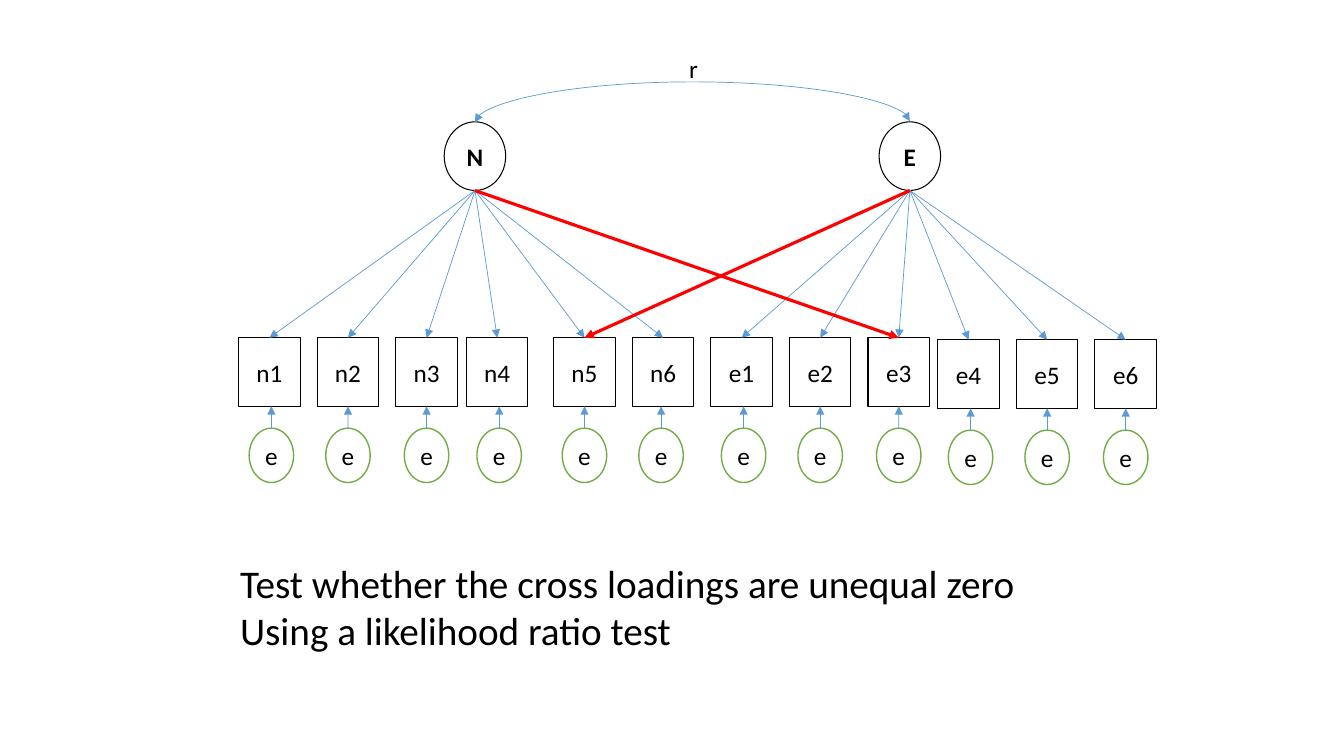
from lxml import etree
from pptx import Presentation
from pptx.dml.color import RGBColor
from pptx.enum import shapes, text
from pptx.oxml import ns
from pptx.util import Cm, Pt

BLACK = RGBColor(0x00, 0x00, 0x00)
WHITE = RGBColor(0xFF, 0xFF, 0xFF)
BLUE = RGBColor(0x5B, 0x9B, 0xD5)
GREEN = RGBColor(0x70, 0xAD, 0x47)
RED = RGBColor(0xFF, 0x00, 0x00)

PITCH = 1.98
ITEM_WIDTH, ITEM_HEIGHT = 1.55, 1.73
ERROR_WIDTH, ERROR_HEIGHT = 1.12, 1.37
ERROR_DROP = 2.28
FACTOR_TOP = 3.07
FACTOR_CENTERS = {"N": 11.97, "E": 22.93}
ITEM_RUNS = [
    (6.79, 8.51, ["n1", "n2", "n3"]),
    (12.53, 8.51, ["n4"]),
    (14.73, 8.51, ["n5", "n6", "e1", "e2", "e3"]),
    (24.41, 8.56, ["e4", "e5", "e6"]),
]
ERROR_SHIFTS = {"n1": 0.05, "n4": 0.05, "n6": -0.05, "e1": 0.05, "e4": 0.05}
CROSS_LOADINGS = [("E", "n5"), ("N", "e3")]
CONCLUSION = ["Test whether the cross loadings are unequal zero",
              "Using a likelihood ratio test"]


def write_text(shape, lines, size=18, bold=False, align=text.PP_ALIGN.CENTER,
               anchor=text.MSO_ANCHOR.MIDDLE):
    """Write one paragraph per line into a shape."""
    frame = shape.text_frame
    frame.word_wrap = False
    frame.vertical_anchor = anchor
    frame.margin_left = frame.margin_right = 0
    frame.margin_top = frame.margin_bottom = 0
    for index, line in enumerate(lines):
        paragraph = frame.add_paragraph() if index else frame.paragraphs[0]
        paragraph.alignment = align
        run = paragraph.add_run()
        run.text = line
        run.font.name = "Calibri"
        run.font.size = Pt(size)
        run.font.bold = bold
        run.font.color.rgb = BLACK


def add_node(slide, kind, center, top, width, height, label,
             color=BLACK, weight=0.75, bold=False):
    """Add a labelled white shape centred on a horizontal position."""
    shape = slide.shapes.add_shape(kind, Cm(center - width / 2), Cm(top),
                                   Cm(width), Cm(height))
    shape.shadow.inherit = False
    shape.fill.solid()
    shape.fill.fore_color.rgb = WHITE
    shape.line.color.rgb = color
    shape.line.width = Pt(weight)
    write_text(shape, [label], bold=bold)
    return shape


def add_arrow(slide, start, end, color=BLUE, weight=0.5,
              kind=shapes.MSO_CONNECTOR.STRAIGHT, ends=("tailEnd",)):
    """Add a connector with triangular arrowheads."""
    arrow = slide.shapes.add_connector(kind, *start, *end)
    arrow.line.color.rgb = color
    arrow.line.width = Pt(weight)
    line = arrow.line._get_or_add_ln()
    for end_name in ends:
        etree.SubElement(line, ns.qn(f"a:{end_name}"), type="triangle")
    etree.SubElement(arrow._element.spPr, ns.qn("a:effectLst"))
    return arrow


def add_correlation(slide):
    """Add the curved double arrow between the factors and its label."""
    middle = sum(FACTOR_CENTERS.values()) / 2
    span = FACTOR_CENTERS["E"] - FACTOR_CENTERS["N"]
    depth = 0.03
    arrow = add_arrow(
        slide,
        (Cm(middle + depth / 2), Cm(FACTOR_TOP + span / 2)),
        (Cm(middle - depth / 2), Cm(FACTOR_TOP - span / 2)),
        kind=shapes.MSO_CONNECTOR.CURVE, ends=("headEnd", "tailEnd"))
    properties = arrow._element.spPr
    properties.find(ns.qn("a:xfrm")).set("rot", "5400000")
    adjustments = properties.find(ns.qn("a:prstGeom")).find(ns.qn("a:avLst"))
    etree.SubElement(adjustments, ns.qn("a:gd"), name="adj1", fmla="val 3400000")
    label = slide.shapes.add_textbox(Cm(17.26), Cm(1.35), Cm(0.43), Cm(0.76))
    write_text(label, ["r"], anchor=text.MSO_ANCHOR.TOP)


def add_item(slide, name, center, top):
    """Add an observed item with its error term."""
    item = add_node(slide, shapes.MSO_SHAPE.RECTANGLE, center, top,
                    ITEM_WIDTH, ITEM_HEIGHT, name)
    shift = ERROR_SHIFTS.get(name, 0)
    error_x = center + shift
    error_top = top + ERROR_DROP
    add_node(slide, shapes.MSO_SHAPE.OVAL, error_x, error_top,
             ERROR_WIDTH, ERROR_HEIGHT, "e", color=GREEN, weight=1)
    arrow = add_arrow(slide, (Cm(error_x), Cm(error_top)),
                      (Cm(error_x), Cm(top + ITEM_HEIGHT)))
    if not shift:
        arrow.end_connect(item, 2)
    return item


def add_loading(slide, factor, item, **line_format):
    """Add an arrow from the foot of a factor to the top of an item."""
    start = (factor.left + factor.width // 2, factor.top + factor.height)
    arrow = add_arrow(slide, start, (item.left, item.top), **line_format)
    arrow.end_connect(item, 0)


def main():
    """Build the factor model slide."""
    presentation = Presentation()
    presentation.slide_width = Cm(33.87)
    presentation.slide_height = Cm(19.05)
    slide = presentation.slides.add_slide(presentation.slide_layouts[6])

    factors = {name: add_node(slide, shapes.MSO_SHAPE.OVAL, center, FACTOR_TOP,
                              ITEM_WIDTH, ITEM_HEIGHT, name, bold=True)
               for name, center in FACTOR_CENTERS.items()}
    add_correlation(slide)
    items = {name: add_item(slide, name, first + index * PITCH, top)
             for first, top, names in ITEM_RUNS
             for index, name in enumerate(names)}
    for name, item in items.items():
        add_loading(slide, factors[name[0].upper()], item)
    for factor, item in CROSS_LOADINGS:
        add_loading(slide, factors[factor], items[item], color=RED, weight=2.25)

    conclusion = slide.shapes.add_textbox(Cm(6.05), Cm(14.1), Cm(19.7), Cm(2.4))
    write_text(conclusion, CONCLUSION, size=28, align=text.PP_ALIGN.LEFT,
               anchor=text.MSO_ANCHOR.TOP)
    presentation.save("out.pptx")


if __name__ == "__main__":
    main()
